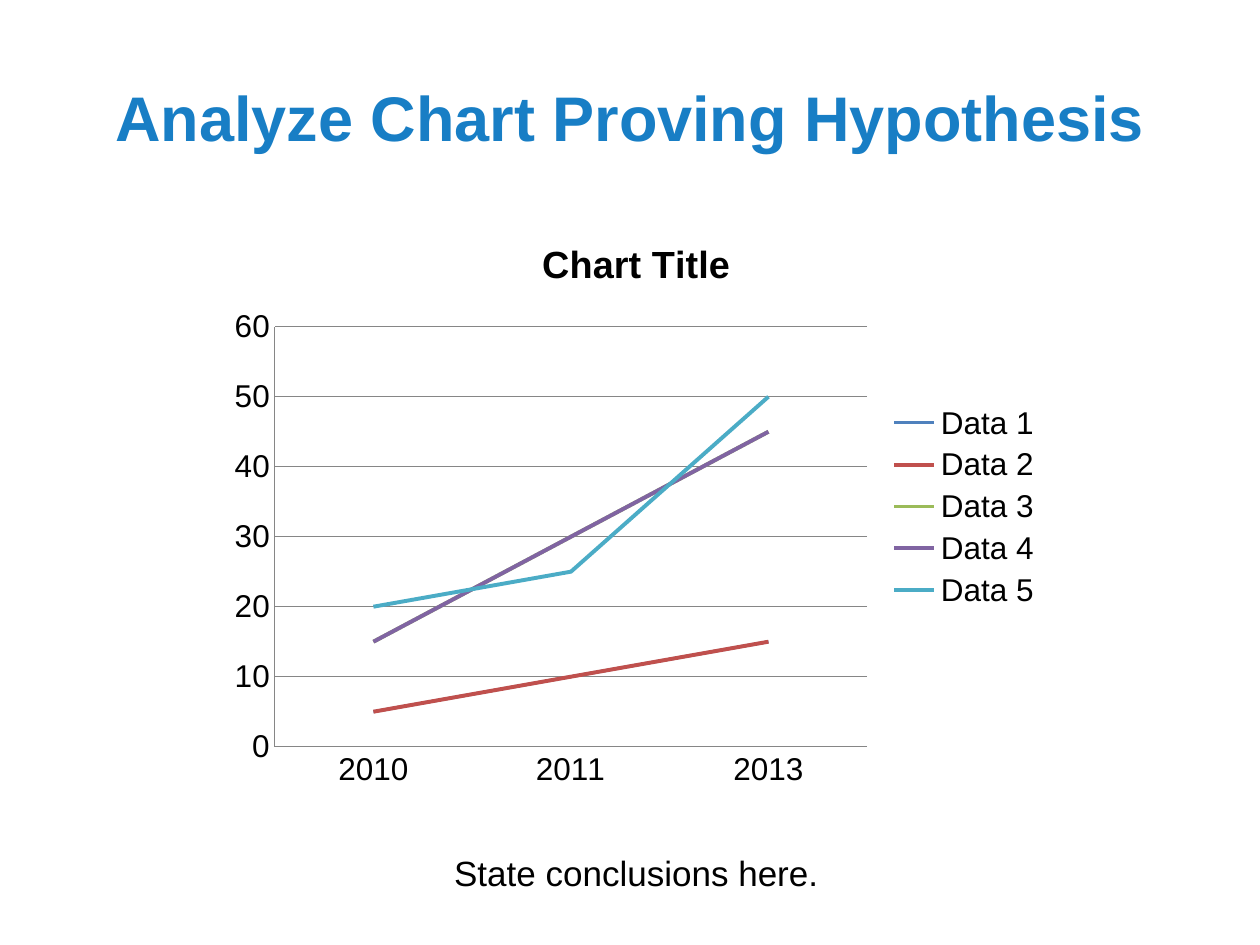
from pptx import Presentation
from pptx.chart.data import CategoryChartData
from pptx.dml.color import RGBColor
from pptx.enum.chart import XL_CHART_TYPE, XL_LEGEND_POSITION, XL_TICK_MARK
from pptx.enum.text import MSO_ANCHOR, MSO_AUTO_SIZE, PP_ALIGN
from pptx.util import Inches, Pt

BLUE = RGBColor(0x18, 0x7E, 0xC5)
BLACK = RGBColor(0, 0, 0)
GRAY = RGBColor(0x86, 0x86, 0x86)

TITLE = "Analyze Chart Proving Hypothesis"
CHART_TITLE = "Chart Title"
CONCLUSION = "State conclusions here."
YEARS = ["2010", "2011", "2013"]
SERIES = [  # name, values, colour, line width
    ("Data 1", (5, 10, 15), RGBColor(0x4F, 0x81, 0xBD), 1.75),
    ("Data 2", (5, 10, 15), RGBColor(0xC0, 0x50, 0x4D), 2.25),
    ("Data 3", (15, 30, 45), RGBColor(0x9B, 0xBB, 0x59), 2.25),
    ("Data 4", (15, 30, 45), RGBColor(0x80, 0x64, 0xA2), 2.25),
    ("Data 5", (20, 25, 50), RGBColor(0x4B, 0xAC, 0xC6), 2.25),
]
TITLE_BOX = (0.5, 0.3, 9, 1.25)
CHART_BOX = (1.73, 1.7, 6.64, 4.64)
CONCLUSION_BOX = (3.49, 6.71, 3.12, 0.44)


def set_font(font, size, color=BLACK, bold=False):
    values = {"name": "Arial", "size": Pt(size), "bold": bold}
    for name, value in values.items():
        setattr(font, name, value)
    font.color.rgb = color


def set_line(line, color, width):
    line.color.rgb = color
    line.width = Pt(width)


def set_text(tf, text, size, color=BLACK, bold=False):
    p = tf.paragraphs[0]
    p.alignment = PP_ALIGN.CENTER
    r = p.add_run()
    r.text = text
    set_font(r.font, size, color, bold)


def add_line_chart(s):
    data = CategoryChartData()
    data.categories = YEARS
    for name, values, *_ in SERIES:
        data.add_series(name, values)
    box = map(Inches, CHART_BOX)
    chart = s.shapes.add_chart(XL_CHART_TYPE.LINE, *box, data).chart
    set_font(chart.font, 18)
    set_text(chart.chart_title.text_frame, CHART_TITLE, 21.6, bold=True)
    chart.chart_title.include_in_layout = False

    chart.has_legend = True
    chart.legend.position = XL_LEGEND_POSITION.RIGHT
    chart.legend.include_in_layout = False

    for axis in (chart.category_axis, chart.value_axis):
        axis.major_tick_mark = axis.minor_tick_mark = XL_TICK_MARK.NONE
        set_line(axis.format.line, GRAY, 0.75)
    value_axis = chart.value_axis
    value_axis.minimum_scale, value_axis.maximum_scale = 0, 60
    value_axis.major_unit = 10
    set_line(value_axis.major_gridlines.format.line, GRAY, 0.75)

    chart.plots[0].vary_by_categories = False
    for series, (_, _, color, width) in zip(chart.plots[0].series, SERIES):
        series.smooth = False
        set_line(series.format.line, color, width)


def main():
    prs = Presentation()
    prs.slide_width, prs.slide_height = Inches(10), Inches(7.5)
    s = prs.slides.add_slide(prs.slide_layouts[5])

    title = s.shapes.title
    title.left, title.top, title.width, title.height = map(Inches, TITLE_BOX)
    title.text_frame.vertical_anchor = MSO_ANCHOR.MIDDLE
    set_text(title.text_frame, TITLE, 36, BLUE, bold=True)

    add_line_chart(s)

    tf = s.shapes.add_textbox(*map(Inches, CONCLUSION_BOX)).text_frame
    tf.word_wrap = False
    tf.auto_size = MSO_AUTO_SIZE.SHAPE_TO_FIT_TEXT
    set_text(tf, CONCLUSION, 20)

    prs.save("out.pptx")


if __name__ == "__main__":
    main()
